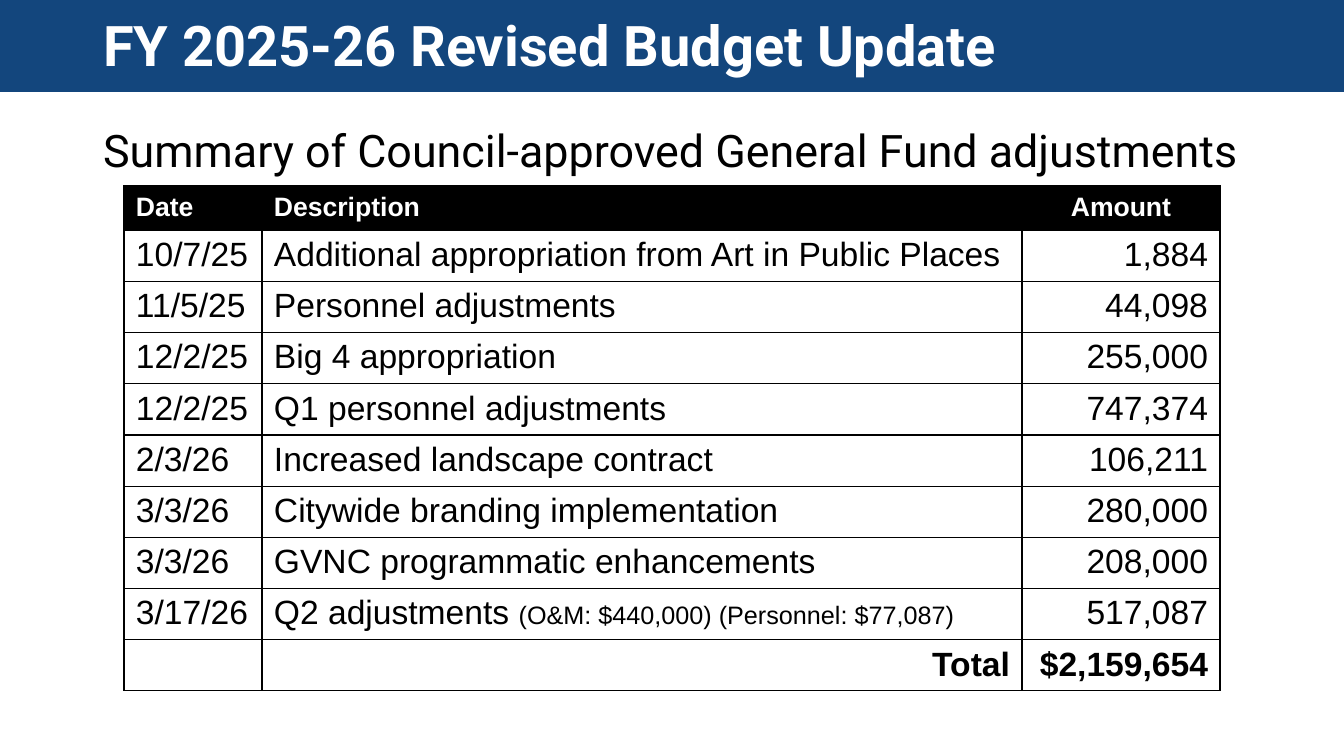
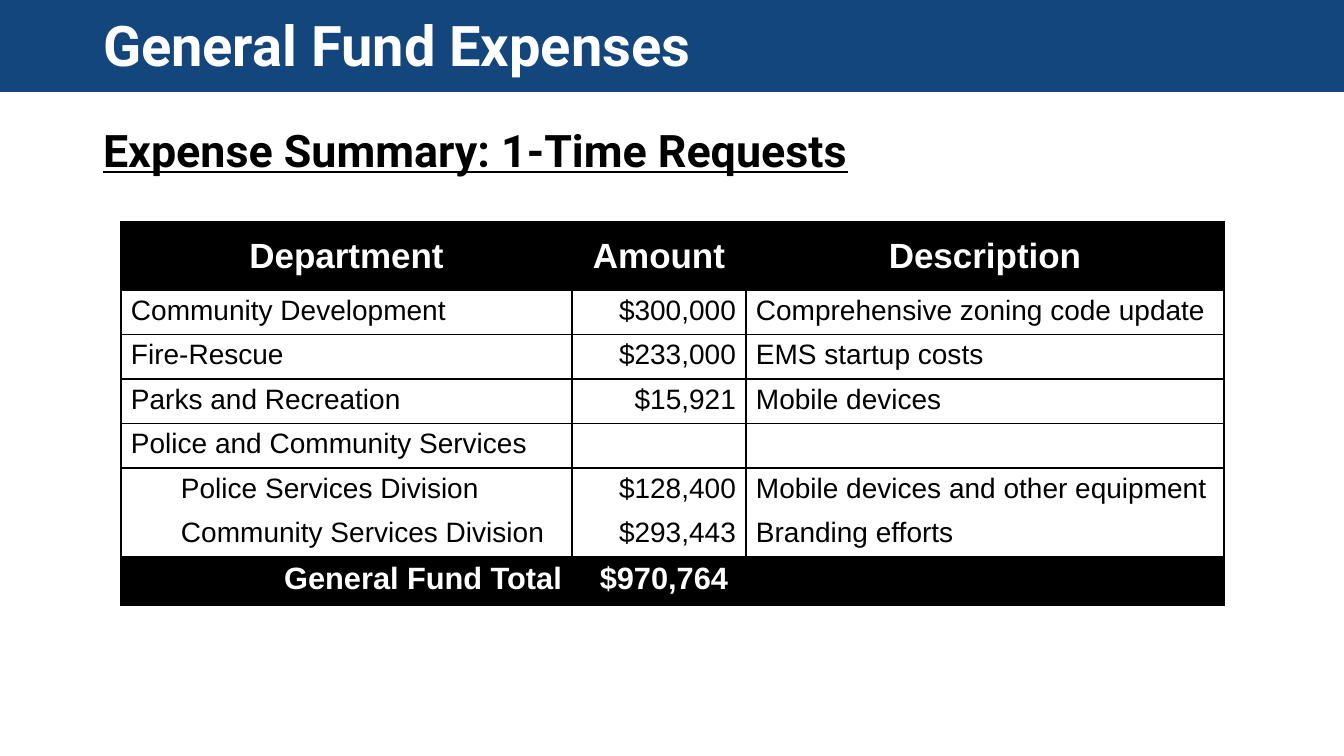
from dataclasses import dataclass

from lxml import etree
from pptx import Presentation
from pptx.dml.color import RGBColor
from pptx.enum.shapes import MSO_SHAPE
from pptx.enum.text import MSO_ANCHOR, MSO_AUTO_SIZE, PP_ALIGN
from pptx.oxml.ns import qn
from pptx.util import Pt

W, H = 1344, 756
SCALE = 12192000 / W
RECT = MSO_SHAPE.RECTANGLE
TOP, MIDDLE = MSO_ANCHOR.TOP, MSO_ANCHOR.MIDDLE
NO_FIT = MSO_AUTO_SIZE.NONE
ALIGN = {"l": PP_ALIGN.LEFT, "c": PP_ALIGN.CENTER, "r": PP_ALIGN.RIGHT}
PLAIN_TABLE = "{2D5ABB26-0587-4C30-8999-92F81FD0307C}"


@dataclass(frozen=True)
class Theme:
    blue: str = "13467D"
    black: str = "000000"
    white: str = "FFFFFF"
    head_font: str = "Roboto"
    table_font: str = "Arial"
    title: int = 40
    subtitle: int = 32
    note: int = 18
    line: int = 1


T = Theme()
BAND = (0, 0, W, 92)
TITLE = (93, 14, 1159, 68)


def px(n):
    return round(n * SCALE)


def rgb(color):
    return RGBColor.from_string(color)


def place(sp, box):
    sp.left, sp.top, sp.width, sp.height = map(px, box)


def write(p, text, size, font=T.table_font, color=T.black, bold=False, underline=False):
    r = p.add_run()
    r.text = text
    f = r.font
    f.size, f.name, f.bold, f.underline = Pt(size), font, bold, underline
    f.color.rgb = rgb(color)


def add_band(prs, slide):
    """Draw the title band and move it to the back of the slide master."""
    sp = slide.shapes.add_shape(RECT, *map(px, BAND))
    sp.shadow.inherit = False
    sp.fill.solid()
    sp.fill.fore_color.rgb = rgb(T.blue)
    sp.line.fill.background()
    prs.slide_master.element.cSld.spTree.insert(2, sp.element)


def fill_placeholder(sp, box, text, anchor, **fmt):
    place(sp, box)
    tf = sp.text_frame
    tf.word_wrap, tf.auto_size, tf.vertical_anchor = True, NO_FIT, anchor
    p = tf.paragraphs[0]
    p.alignment, p.line_spacing, p.space_before = ALIGN["l"], 0.9, Pt(0)
    pPr = p._p.get_or_add_pPr()
    pPr.set("marL", "0")
    pPr.set("indent", "0")
    etree.SubElement(pPr, qn("a:buNone"))
    write(p, text, font=T.head_font, **fmt)


def add_page(prs, title, subtitle, box, **fmt):
    slide = prs.slides.add_slide(prs.slide_layouts[1])
    fill_placeholder(slide.shapes.title, TITLE, title, MIDDLE,
                     size=T.title, color=T.white, bold=True)
    fill_placeholder(slide.placeholders[1], box, subtitle, TOP, size=T.subtitle, **fmt)
    return slide


def border(cell, sides):
    tcPr = cell._tc.get_or_add_tcPr()
    for side in sides:
        ln = etree.SubElement(tcPr, qn(f"a:ln{side}"), w=str(Pt(T.line)))
        fill = etree.SubElement(ln, qn("a:solidFill"))
        etree.SubElement(fill, qn("a:srgbClr"), val=T.black)


def fill_cell(cell, text, align, sides, inset, dark, anchor, **fmt):
    border(cell, sides)
    cell.fill.solid()
    cell.fill.fore_color.rgb = rgb(T.black if dark else T.white)
    cell.margin_left = cell.margin_right = px(inset[0])
    cell.margin_top = cell.margin_bottom = px(inset[1])
    cell.vertical_anchor = anchor
    p = cell.text_frame.paragraphs[0]
    p.alignment = ALIGN[align]
    if text:
        write(p, text, color=T.white if dark else T.black, **fmt)


def add_grid(slide, box, cols, rows, aligns, sizes, ends, inset,
             head_anchor=TOP, dark_foot=False, joined=()):
    """Add a table; aligns and sizes are for head, body and foot, ends are the
    head and foot heights, and joined lists the rows without a line below."""
    frame = slide.shapes.add_table(len(rows), len(cols), *map(px, box))
    table = frame.table
    table.first_row = table.horz_banding = False
    next(frame.element.iter(qn("a:tableStyleId"))).text = PLAIN_TABLE
    for col, width in zip(table.columns, cols):
        col.width = px(width)
    last = len(rows) - 1
    body_height = (box[3] - sum(ends)) / (last - 1)
    heights = (ends[0], body_height, ends[1])
    for i, texts in enumerate(rows):
        part = 0 if i == 0 else 2 if i == last else 1
        table.rows[i].height = px(heights[part])
        sides = ["L", "R"]
        if i - 1 not in joined:
            sides.append("T")
        if i not in joined:
            sides.append("B")
        for j, text in enumerate(texts):
            fill_cell(table.cell(i, j), text, aligns[part][j], sides, inset,
                      dark=part == 0 or part == 2 and dark_foot,
                      anchor=TOP if part else head_anchor,
                      size=sizes[part], bold=part != 1)
    return table


def add_adjustments(prs):
    slide = add_page(prs, "FY 2025-26 Revised Budget Update",
                     "Summary of Council-approved General Fund adjustments",
                     (93, 124, 1159, 60))
    rows = [
        ("Date", "Description", "Amount"),
        ("10/7/25", "Additional appropriation from Art in Public Places", "1,884"),
        ("11/5/25", "Personnel adjustments", "44,098"),
        ("12/2/25", "Big 4 appropriation", "255,000"),
        ("12/2/25", "Q1 personnel adjustments", "747,374"),
        ("2/3/26", "Increased landscape contract", "106,211"),
        ("3/3/26", "Citywide branding implementation", "280,000"),
        ("3/3/26", "GVNC programmatic enhancements", "208,000"),
        ("3/17/26", "Q2 adjustments ", "517,087"),
        ("", "Total", "$2,159,654"),
    ]
    table = add_grid(slide, (124, 186, 1096, 505), (138, 760, 198), rows,
                     aligns=("llc", "llr", "lrr"), sizes=(19, 24, 24),
                     ends=(44, 51), inset=(12, 6))
    write(table.cell(8, 1).text_frame.paragraphs[0],
          "(O&M: $440,000) (Personnel: $77,087)", T.note)
    return slide


def add_expenses(prs):
    slide = add_page(prs, "General Fund Expenses", "Expense Summary: 1-Time Requests",
                     (93, 124, 834, 80), bold=True, underline=True)
    rows = [
        ("Department", "Amount", "Description"),
        ("Community Development", "$300,000", "Comprehensive zoning code update"),
        ("Fire-Rescue", "$233,000", "EMS startup costs"),
        ("Parks and Recreation", "$15,921", "Mobile devices"),
        ("Police and Community Services", "", ""),
        ("Police Services Division", "$128,400", "Mobile devices and other equipment"),
        ("Community Services Division", "$293,443", "Branding efforts"),
        ("General Fund Total", "$970,764", ""),
    ]
    table = add_grid(slide, (121, 222, 1103, 384), (451, 174, 478), rows,
                     aligns=("ccc", "lrl", "rrl"), sizes=(25, 20, 22),
                     ends=(68, 49), inset=(10, 5), head_anchor=MIDDLE,
                     dark_foot=True, joined=(4, 5))
    for division in (5, 6):
        p = table.cell(division, 0).text_frame.paragraphs[0]
        p.level = 1
        p._p.get_or_add_pPr().set("marL", str(px(50)))
    table.cell(7, 1).margin_right = px(18)


def main():
    prs = Presentation()
    prs.slide_width, prs.slide_height = px(W), px(H)
    add_band(prs, add_adjustments(prs))
    add_expenses(prs)
    prs.save("out.pptx")


if __name__ == "__main__":
    main()
